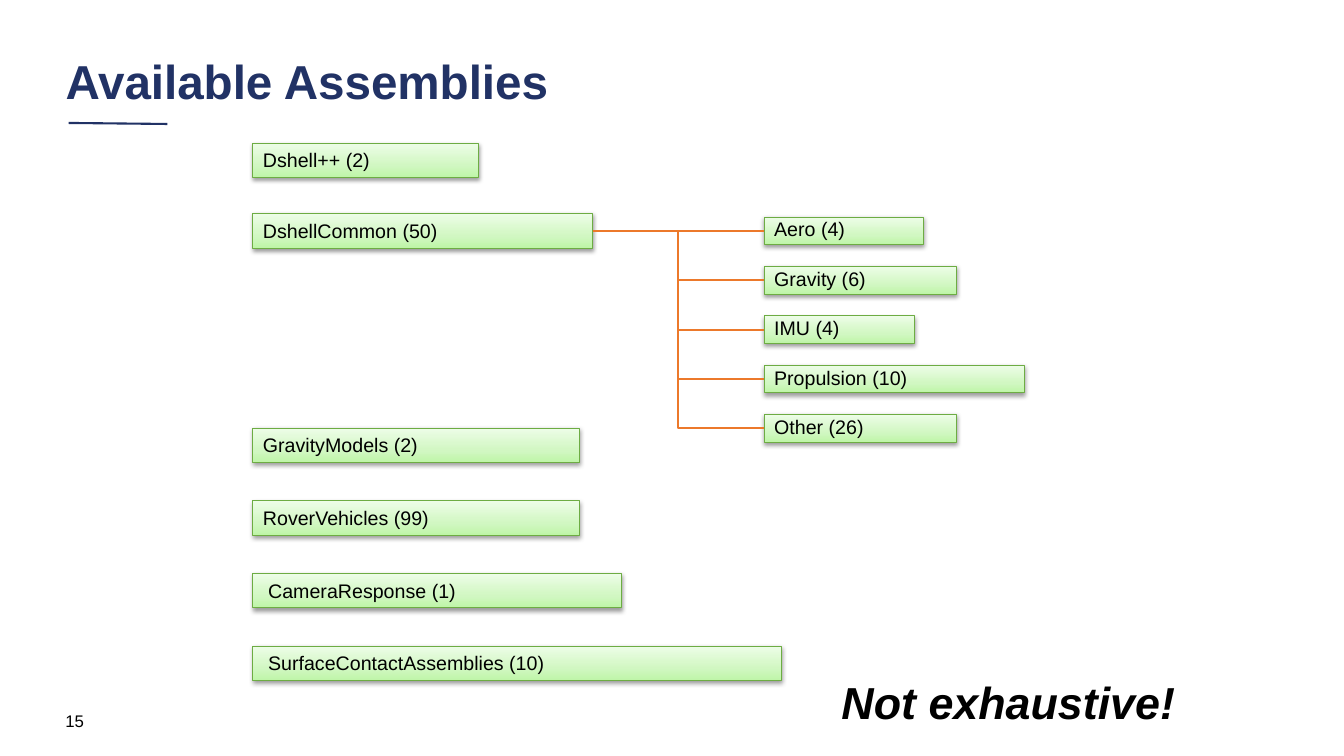
from copy import deepcopy

from pptx import Presentation
from pptx.dml.color import RGBColor
from pptx.enum.shapes import MSO_CONNECTOR as Connector, MSO_SHAPE as Preset
from pptx.enum.text import MSO_ANCHOR as Anchor, MSO_AUTO_SIZE as AutoSize, PP_ALIGN as Align
from pptx.oxml import parse_xml
from pptx.oxml.ns import nsdecls, qn
from pptx.util import Inches, Pt

NAVY = RGBColor(0x21, 0x32, 0x65)
BLACK = RGBColor(0x00, 0x00, 0x00)
ORANGE = RGBColor(0xEC, 0x79, 0x2B)
GREEN_EDGE = RGBColor(0x6D, 0xAC, 0x43)
GREEN_STOPS = [
    (0, RGBColor(0xBE, 0xF5, 0xA7)),
    (0.35, RGBColor(0xD1, 0xF7, 0xC2)),
    (1, RGBColor(0xED, 0xFD, 0xE7)),
]
SHADOW = (
    f'<a:outerShdw {nsdecls("a")} blurRad="40000" dist="20000" dir="5400000" rotWithShape="0">'
    '<a:srgbClr val="000000"><a:alpha val="38000"/></a:srgbClr></a:outerShdw>'
)

COLUMNS, ROWS = 160, 90
BOX_LEFT, BOX_HEIGHT = 30.12, 4.1
GROUP_LEFT, GROUP_TOP, GROUP_STEP, GROUP_HEIGHT = 90.98, 25.84, 5.88, 3.3
LOWER_TOP, LOWER_STEP = 51, 8.64
SPACE_INDENT = 0.15

UPPER_ASSEMBLIES = [("Dshell++ (2)", 17.04, 26.88), ("DshellCommon (50)", 25.44, 40.44)]
LOWER_ASSEMBLIES = [
    ("GravityModels (2)", 38.88, 0.1),
    ("RoverVehicles (99)", 38.88, 0.1),
    ("CameraResponse (1)", 43.92, SPACE_INDENT),
    ("SurfaceContactAssemblies (10)", 62.88, SPACE_INDENT),
]
COMMON_GROUPS = [
    ("Aero (4)", 18.96),
    ("Gravity (6)", 22.92),
    ("IMU (4)", 17.88),
    ("Propulsion (10)", 30.96),
    ("Other (26)", 22.92),
]


def assign(target, values):
    """Set each attribute named in values on target."""
    for name, value in values.items():
        setattr(target, name, value)


class AssemblySlide:
    """Draws styled elements on one slide, placed in columns and rows."""

    def __init__(self, presentation):
        assign(presentation, {"slide_width": Inches(13.33), "slide_height": Inches(7.5)})
        self.column = presentation.slide_width / COLUMNS
        self.row = presentation.slide_height / ROWS
        self.slide = presentation.slides.add_slide(presentation.slide_layouts[5])
        self.font = {"name": "Arial", "size": Pt(14), "bold": False, "italic": False}

    def place(self, left, top, width, height):
        """Turn grid units into slide lengths."""
        return (round(left * self.column), round(top * self.row),
                round(width * self.column), round(height * self.row))

    def set_text(self, shape, text, color=BLACK, frame=None, spacing=1.0, **font):
        """Put one formatted line of text in a shape."""
        layout = {"word_wrap": True, "vertical_anchor": Anchor.TOP, "auto_size": AutoSize.NONE}
        assign(shape.text_frame, layout | (frame or {}))
        paragraph = shape.text_frame.paragraphs[0]
        paragraph.text = text
        assign(paragraph, {"alignment": Align.LEFT, "line_spacing": spacing})
        assign(paragraph.font, self.font | font)
        paragraph.font.color.rgb = color

    def title(self, text, *cell):
        """Fill and move the title placeholder."""
        shape = self.slide.shapes.title
        assign(shape, dict(zip(("left", "top", "width", "height"), self.place(*cell))))
        self.set_text(shape, text, NAVY, {"vertical_anchor": Anchor.MIDDLE}, 0.9,
                      size=Pt(34), bold=True)

    def label(self, text, *cell, frame=None, **font):
        """Add a plain line of text."""
        self.set_text(self.slide.shapes.add_textbox(*self.place(*cell)), text, frame=frame, **font)

    def box(self, text, *cell, inset=0.05, indent=0.1, spacing=1.0):
        """Add a green gradient box with a soft shadow."""
        shape = self.slide.shapes.add_shape(Preset.RECTANGLE, *self.place(*cell))
        shape.fill.gradient()
        shape.fill.gradient_angle = 90
        stop_list = shape._element.spPr.find(".//" + qn("a:gsLst"))
        stop_list.append(deepcopy(stop_list[0]))
        for stop, (position, color) in zip(shape.fill.gradient_stops, GREEN_STOPS):
            stop.position = position
            stop.color.rgb = color
        shape.line.color.rgb = GREEN_EDGE
        shape.line.width = Pt(0.75)
        shape.shadow.inherit = False
        shape._element.spPr.find(qn("a:effectLst")).append(parse_xml(SHADOW))
        frame = {"margin_left": Inches(indent), "margin_top": Inches(inset),
                 "margin_bottom": Inches(inset), "auto_size": AutoSize.SHAPE_TO_FIT_TEXT}
        self.set_text(shape, text, frame=frame, spacing=spacing)
        return shape

    def line(self, kind, color, left, top, right, bottom):
        """Add a connector without shadow."""
        ends = self.place(left, top, right, bottom)
        connector = self.slide.shapes.add_connector(kind, *ends)
        connector.line.color.rgb = color
        connector.line.width = Pt(1.5)
        connector._element.spPr.append(parse_xml(f'<a:effectLst {nsdecls("a")}/>'))
        return connector

    def link(self, parent, child):
        """Join the right side of parent to the left side of child."""
        connector = self.line(Connector.ELBOW, ORANGE, 0, 0, 1, 1)
        connector.begin_connect(parent, 3)
        connector.end_connect(child, 1)


def main():
    """Build and save the slide."""
    presentation = Presentation()
    page = AssemblySlide(presentation)
    page.title("Available Assemblies", 6.6, 5.5, 133.5, 9.1)
    page.line(Connector.STRAIGHT, NAVY, 8.16, 14.64, 19.92, 14.76)

    for text, top, width in UPPER_ASSEMBLIES:
        common = page.box(text, BOX_LEFT, top, width, BOX_HEIGHT)
    for index, (text, width, indent) in enumerate(LOWER_ASSEMBLIES):
        page.box(text, BOX_LEFT, LOWER_TOP + index * LOWER_STEP, width, BOX_HEIGHT, indent=indent)
    for index, (text, width) in enumerate(COMMON_GROUPS):
        group = page.box(text, GROUP_LEFT, GROUP_TOP + index * GROUP_STEP, width, GROUP_HEIGHT,
                         inset=0.03, spacing=0.9)
        page.link(common, group)

    page.label("Not exhaustive!", 99, 79.7, 42.5, 7.7, size=Pt(32), bold=True, italic=True,
               frame={"word_wrap": False, "auto_size": AutoSize.SHAPE_TO_FIT_TEXT})
    page.label("15", 6.6, 83.4, 36, 4.8, size=Pt(12), frame={"vertical_anchor": Anchor.MIDDLE})
    presentation.save("out.pptx")


if __name__ == "__main__":
    main()
